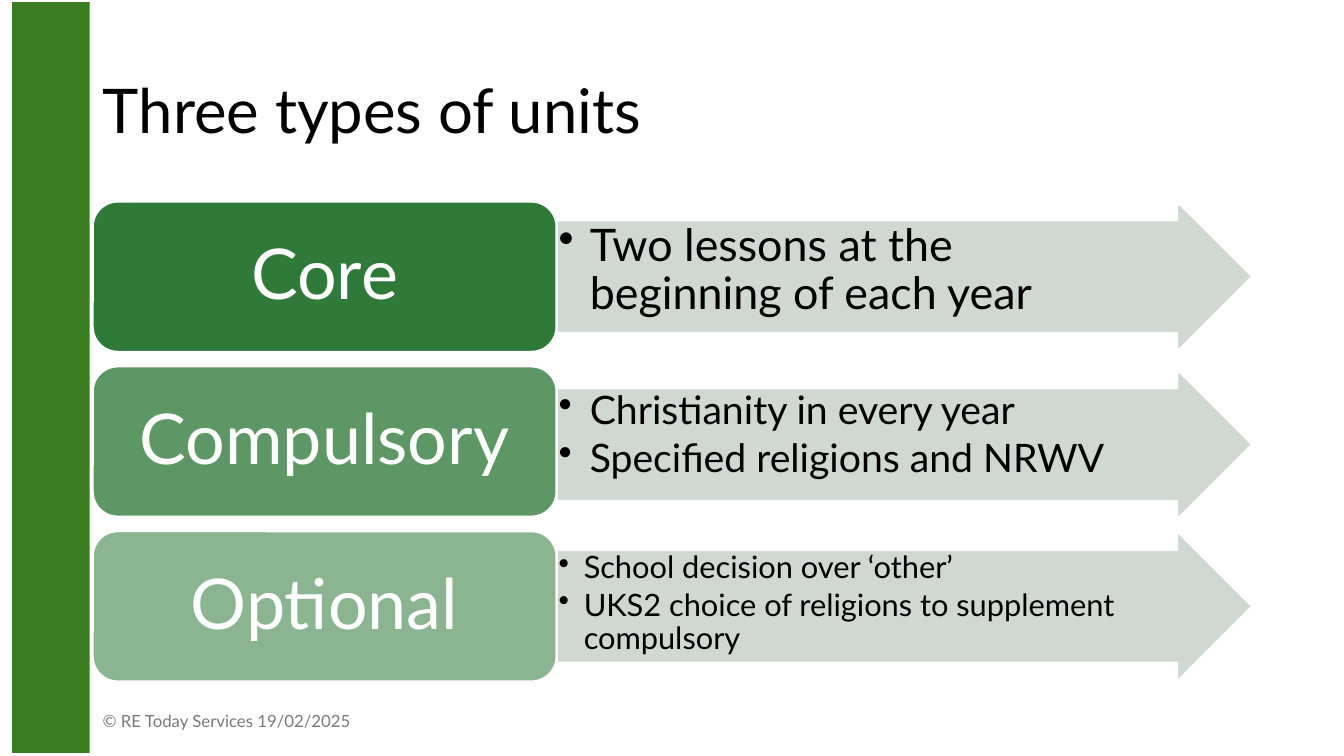
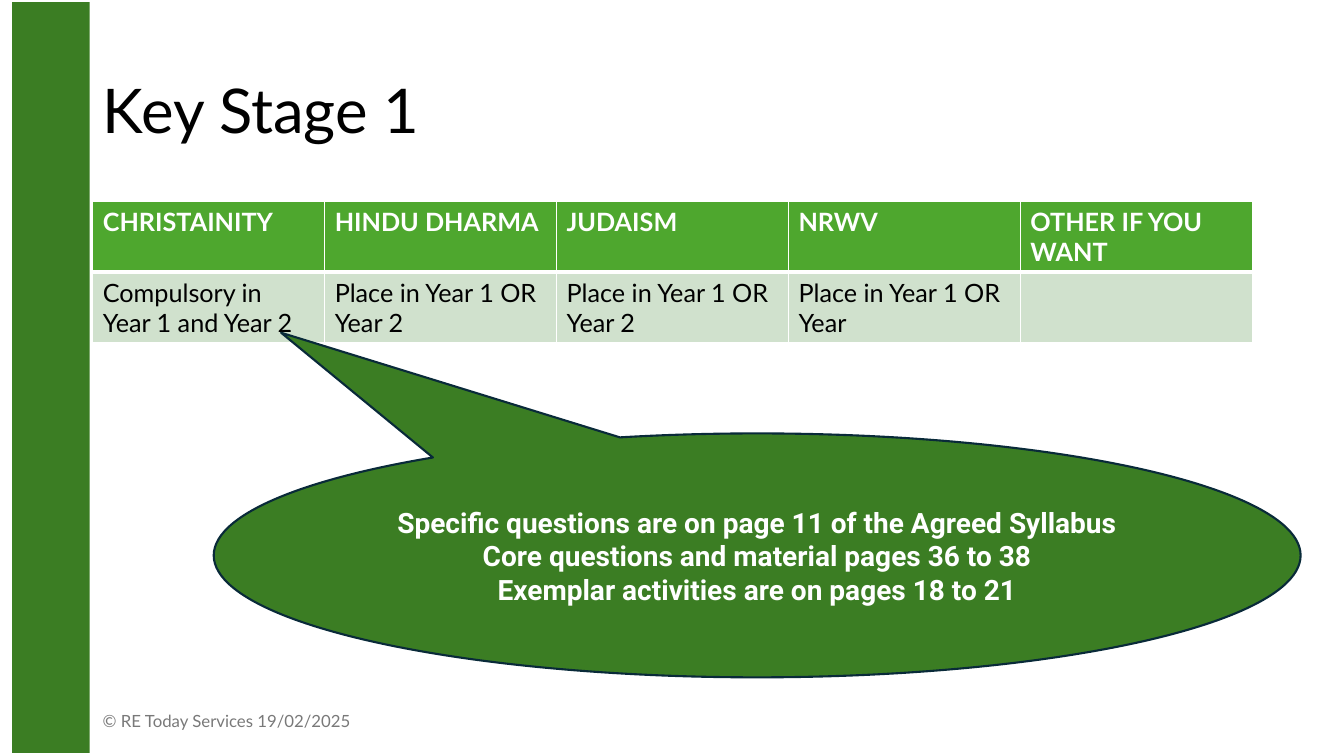
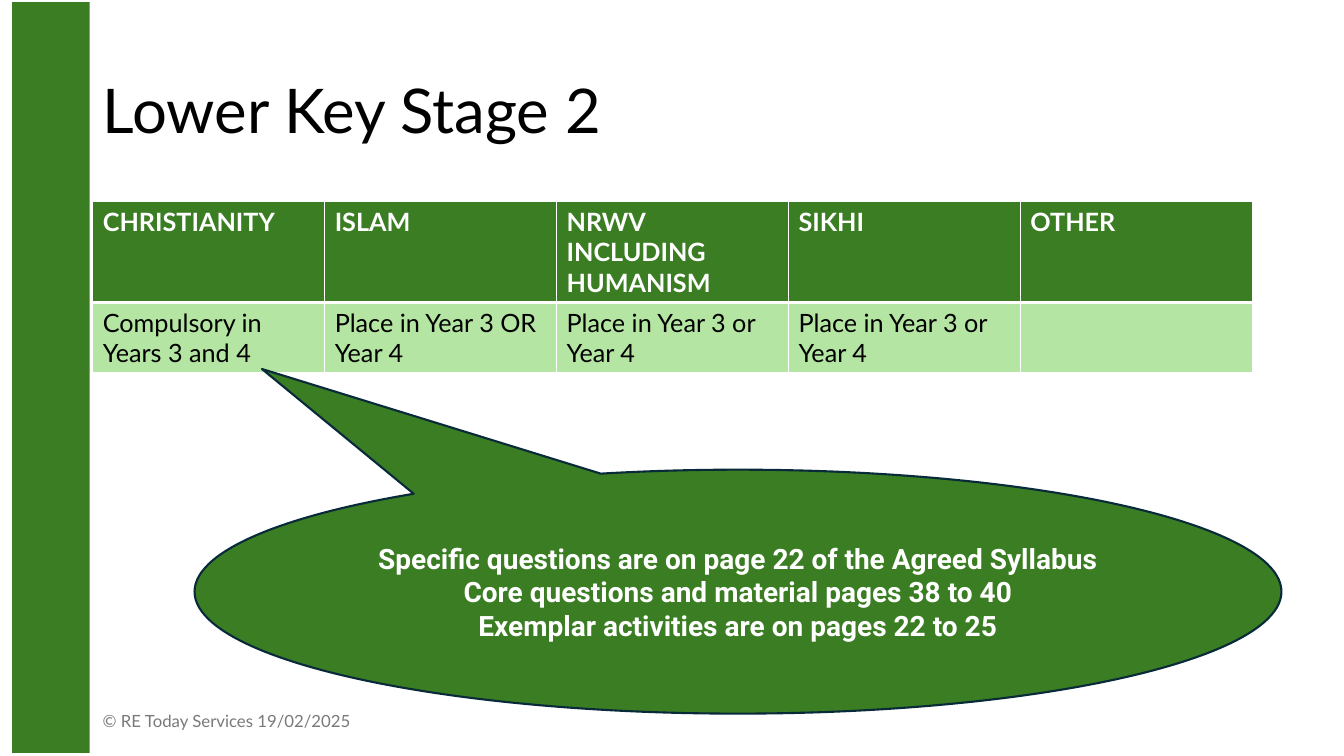
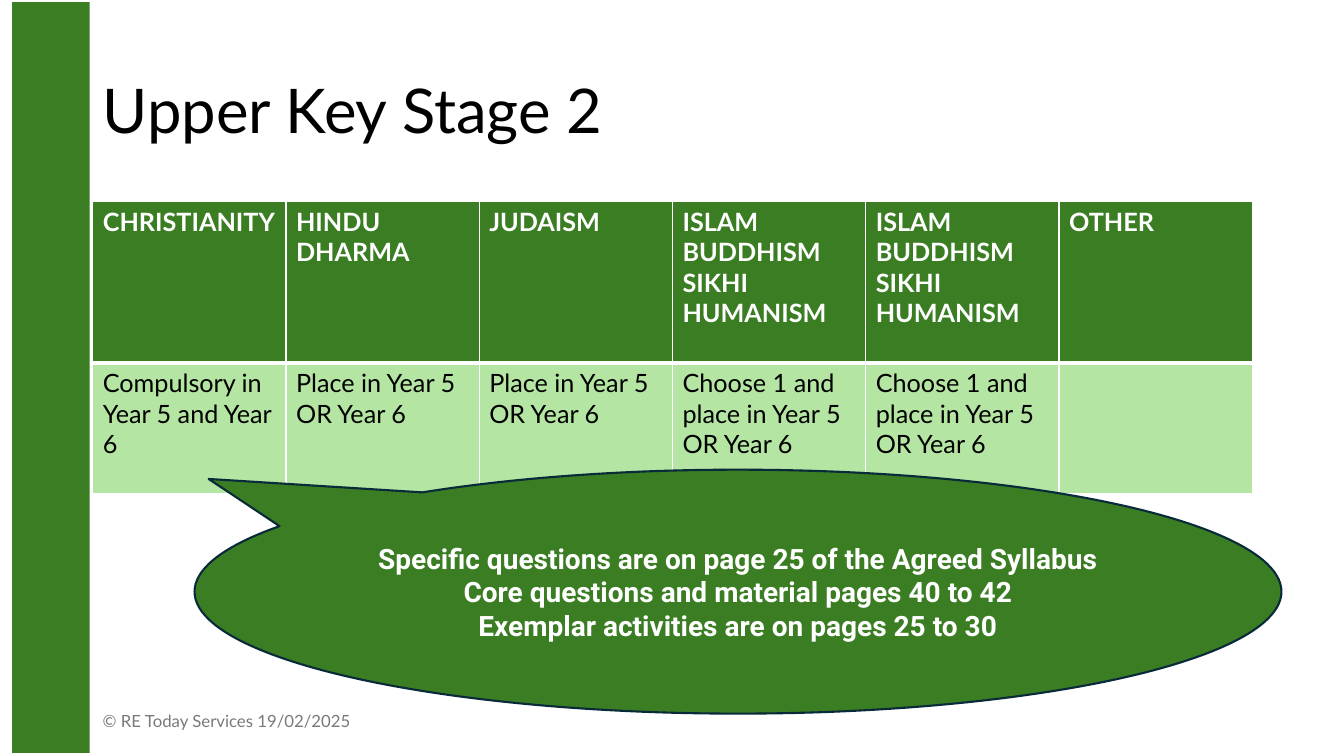
"""Build four slides on the types of unit and the key stages of a syllabus."""
import pptx
import pptx.dml.color
import pptx.enum.shapes
import pptx.enum.text
import pptx.oxml
import pptx.oxml.ns
import pptx.util

Inches, Pt = pptx.util.Inches, pptx.util.Pt
qn = pptx.oxml.ns.qn
SHAPE = pptx.enum.shapes.MSO_SHAPE
ALIGN = pptx.enum.text.PP_ALIGN
MIDDLE = pptx.enum.text.MSO_ANCHOR.MIDDLE
TOP = pptx.enum.text.MSO_ANCHOR.TOP

GREEN, LEAF, FOREST, NAVY = "3B7D23", "4EA72E", "196B24", "092A39"
SAGE, MINT, LIME = "CCD4CD", "D0E1CD", "B4E5A2"
WHITE, BLACK, GREY = "FFFFFF", "000000", "797979"

LEFT, BODY_TOP, WIDTH = 0.92, 2, 11.5
UNIT_W, UNIT_H, UNIT_STEP = 0.4 * WIDTH, 1.49, 1.635
CALLOUT_W, CALLOUT_H = 10.78, 2.42
FOOTER = "© RE Today Services 19/02/2025"

UNITS_TITLE = "Three types of units"
UNITS = [
    dict(name="Core", opacity=90, size=32, indent=0.31, drop=0,
         points=["Two lessons at the beginning of each year"]),
    dict(name="Compulsory", opacity=70, size=28, indent=0.31, drop=0.03,
         points=["Christianity in every year", "Specified religions and NRWV"]),
    dict(name="Optional", opacity=50, size=22, indent=0.25, drop=0,
         points=["School decision over ‘other’",
                 "UKS2 choice of religions to supplement compulsory"]),
]

CHOICE = "ISLAM\nBUDDHISM\nSIKHI\nHUMANISM"
STAGES = [
    dict(title="Key Stage 1", fills=(LEAF, MINT), heights=(0.7, 0.7),
         rows=[["CHRISTAINITY", "HINDU DHARMA", "JUDAISM", "NRWV", "OTHER IF YOU WANT"],
               ["Compulsory in Year 1 and Year 2", "Place in Year 1 OR Year 2",
                "Place in Year 1 OR Year 2", "Place in Year 1 OR Year", ""]],
         pages=("11", "36 to 38", "18 to 21"), at=(2.12, 4.3), tip=(-0.438, -0.913)),
    dict(title="Lower Key Stage 2", fills=(GREEN, LIME), heights=(1, 0.7),
         rows=[["CHRISTIANITY", "ISLAM", "NRWV INCLUDING HUMANISM", "SIKHI", "OTHER"],
               ["Compulsory in Years 3 and 4", "Place in Year 3 OR Year 4",
                "Place in Year 3 or Year 4", "Place in Year 3 or Year 4", ""]],
         pages=("22", "38 to 40", "22 to 25"), at=(1.93, 4.66), tip=(-0.438, -0.913)),
    dict(title="Upper Key Stage 2", fills=(GREEN, LIME), heights=(1.6, 1.3),
         rows=[["CHRISTIANITY", "HINDU DHARMA", "JUDAISM", CHOICE, CHOICE, "OTHER"],
               ["Compulsory in Year 5 and Year 6", "Place in Year 5 OR Year 6",
                "Place in Year 5 OR Year 6", "Choose 1 and place in Year 5 OR Year 6",
                "Choose 1 and place in Year 5 OR Year 6", ""]],
         pages=("25", "40 to 42", "25 to 30"), at=(1.93, 4.66), tip=(-0.487, -0.462)),
]


def rgb(value):
    return pptx.dml.color.RGBColor.from_string(value)


def box(x, y, w, h):
    return [Inches(v) for v in (x, y, w, h)]


def write(tf, text, size, color, font="Lato", bold=False, align=ALIGN.LEFT, spacing=None):
    tf.text = text
    for p in tf.paragraphs:
        p.alignment = align
        if spacing:
            p.line_spacing = spacing
        for r in p.runs:
            r.font.name, r.font.size, r.font.bold = font, Pt(size), bold
            r.font.color.rgb = rgb(color)


def frame(tf, anchor, insets=(0.1, 0.05, 0.1, 0.05)):
    tf.word_wrap = True
    tf.auto_size = pptx.enum.text.MSO_AUTO_SIZE.NONE
    tf.vertical_anchor = anchor
    tf.margin_left, tf.margin_top, tf.margin_right, tf.margin_bottom = box(*insets)


def add_shape(s, kind, at, fill, line=None, opacity=100, adjust=()):
    sp = s.shapes.add_shape(kind, *box(*at))
    sp.shadow.inherit = False
    sp.fill.solid()
    sp.fill.fore_color.rgb = rgb(fill)
    if opacity < 100:
        clr = sp.element.spPr.find(".//" + qn("a:srgbClr"))
        clr.makeelement(qn("a:alpha"), {})
        alpha = pptx.oxml.parse_xml(
            f'<a:alpha {pptx.oxml.ns.nsdecls("a")} val="{opacity * 1000}"/>')
        clr.append(alpha)
    if line:
        sp.line.color.rgb = rgb(line)
        sp.line.width = Pt(1.5)
    else:
        sp.line.fill.background()
    for i, value in enumerate(adjust):
        sp.adjustments[i] = value
    return sp


def add_bullet(p, indent):
    pPr = p._p.get_or_add_pPr()
    pPr.set("marL", str(Inches(indent)))
    pPr.set("indent", str(-Inches(indent)))
    pPr.append(pptx.oxml.parse_xml(f'<a:buChar {pptx.oxml.ns.nsdecls("a")} char="•"/>'))


def set_borders(cell, **widths):
    tcPr = cell._tc.get_or_add_tcPr()
    for side, width in widths.items():
        tcPr.append(pptx.oxml.parse_xml(
            f'<a:ln{side} {pptx.oxml.ns.nsdecls("a")} w="{Pt(width)}"><a:solidFill>'
            f'<a:srgbClr val="{WHITE}"/></a:solidFill></a:ln{side}>'))


def add_slide(prs, title):
    s = prs.slides.add_slide(prs.slide_layouts[5])
    sp = s.shapes.title
    sp.left, sp.top, sp.width, sp.height = box(LEFT, 0.4, WIDTH, 1.45)
    frame(sp.text_frame, MIDDLE)
    write(sp.text_frame, title, 44, BLACK, spacing=0.9)
    footer = s.shapes.add_textbox(*box(LEFT, 6.95, 3, 0.4)).text_frame
    frame(footer, MIDDLE)
    write(footer, FOOTER, 12, GREY)
    return s


def add_band(prs, s):
    band = add_shape(s, SHAPE.RECTANGLE, (0.12, 0.02, 0.77, 7.45), GREEN)
    prs.slide_layouts[5].element.cSld.spTree.insert(2, band.element)


def add_unit(s, unit, top):
    arrow = add_shape(s, SHAPE.RIGHT_ARROW,
                      (LEFT + UNIT_W, top + unit["drop"], WIDTH - UNIT_W, UNIT_H),
                      SAGE, WHITE, 90, (0.75, 0.5))
    frame(arrow.text_frame, TOP, (0.02, 0.02, 0.39, 0.02))
    write(arrow.text_frame, "\n".join(unit["points"]), unit["size"], BLACK, spacing=0.9)
    for p in arrow.text_frame.paragraphs:
        p.space_after = Pt(round(0.15 * unit["size"], 1))
        add_bullet(p, unit["indent"])
    name = add_shape(s, SHAPE.ROUNDED_RECTANGLE, (LEFT, top, UNIT_W, UNIT_H),
                     FOREST, WHITE, unit["opacity"])
    frame(name.text_frame, MIDDLE, (0.21, 0.1, 0.21, 0.1))
    write(name.text_frame, unit["name"], 50, WHITE, align=ALIGN.CENTER, spacing=0.9)


def add_stage_table(s, stage):
    rows, heights = stage["rows"], stage["heights"]
    columns = len(rows[0])
    table = s.shapes.add_table(len(rows), columns,
                               *box(LEFT, BODY_TOP, WIDTH, sum(heights))).table
    for column in table.columns:
        column.width = Inches(WIDTH / columns)
    for i, texts in enumerate(rows):
        header = i == 0
        table.rows[i].height = Inches(heights[i])
        for j, text in enumerate(texts):
            cell = table.cell(i, j)
            set_borders(cell, L=1, R=1, T=1 if header else 3, B=3 if header else 1)
            cell.fill.solid()
            cell.fill.fore_color.rgb = rgb(stage["fills"][i])
            write(cell.text_frame, text, 18, WHITE if header else BLACK, bold=header)


def add_callout(s, stage):
    questions, core, activities = stage["pages"]
    sp = add_shape(s, SHAPE.OVAL_CALLOUT, (*stage["at"], CALLOUT_W, CALLOUT_H),
                   GREEN, NAVY, adjust=stage["tip"])
    frame(sp.text_frame, MIDDLE)
    write(sp.text_frame,
          f"Specific questions are on page {questions} of the Agreed Syllabus\n"
          f"Core questions and material pages {core}\n"
          f"Exemplar activities are on pages {activities}",
          20, WHITE, "Roboto", True, ALIGN.CENTER)


def main():
    prs = pptx.Presentation()
    prs.slide_width, prs.slide_height = Inches(13.33), Inches(7.5)
    s = add_slide(prs, UNITS_TITLE)
    add_band(prs, s)
    for i, unit in enumerate(UNITS):
        add_unit(s, unit, BODY_TOP + i * UNIT_STEP)
    for stage in STAGES:
        s = add_slide(prs, stage["title"])
        add_stage_table(s, stage)
        add_callout(s, stage)
    prs.save("out.pptx")


if __name__ == "__main__":
    main()
